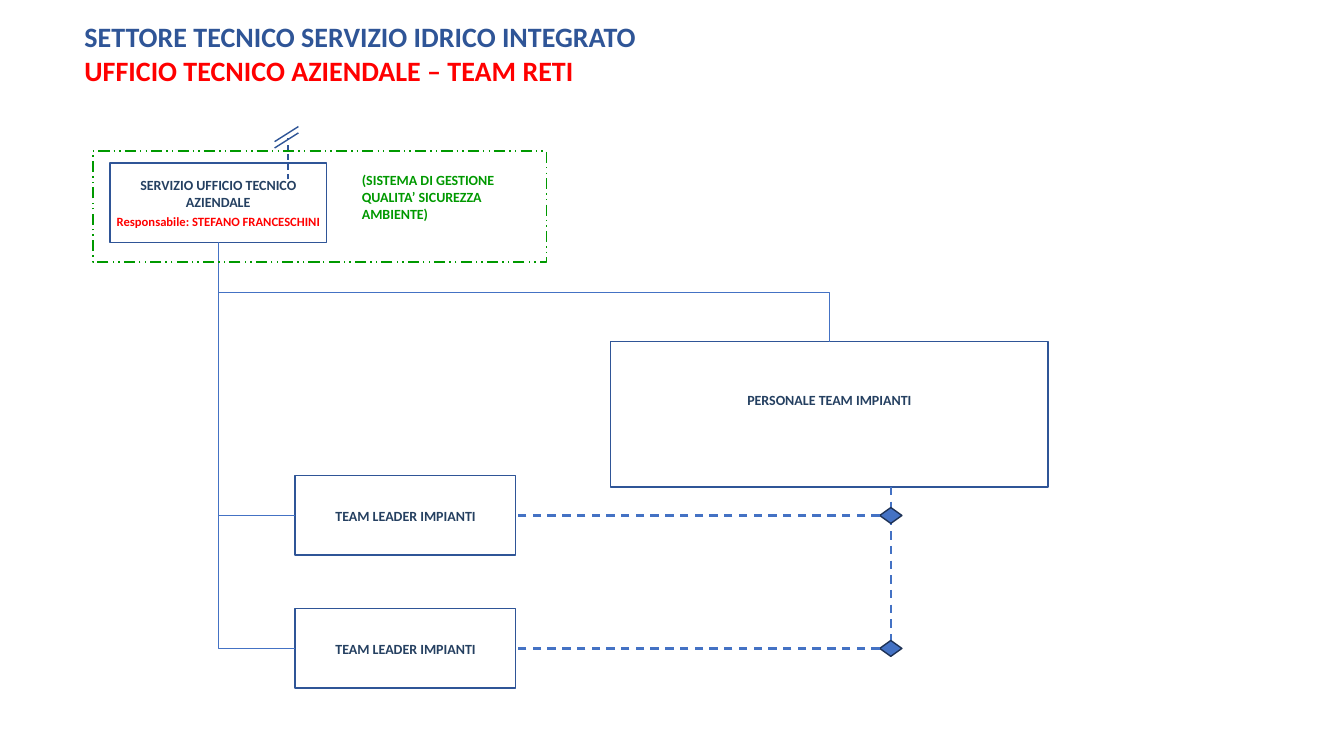
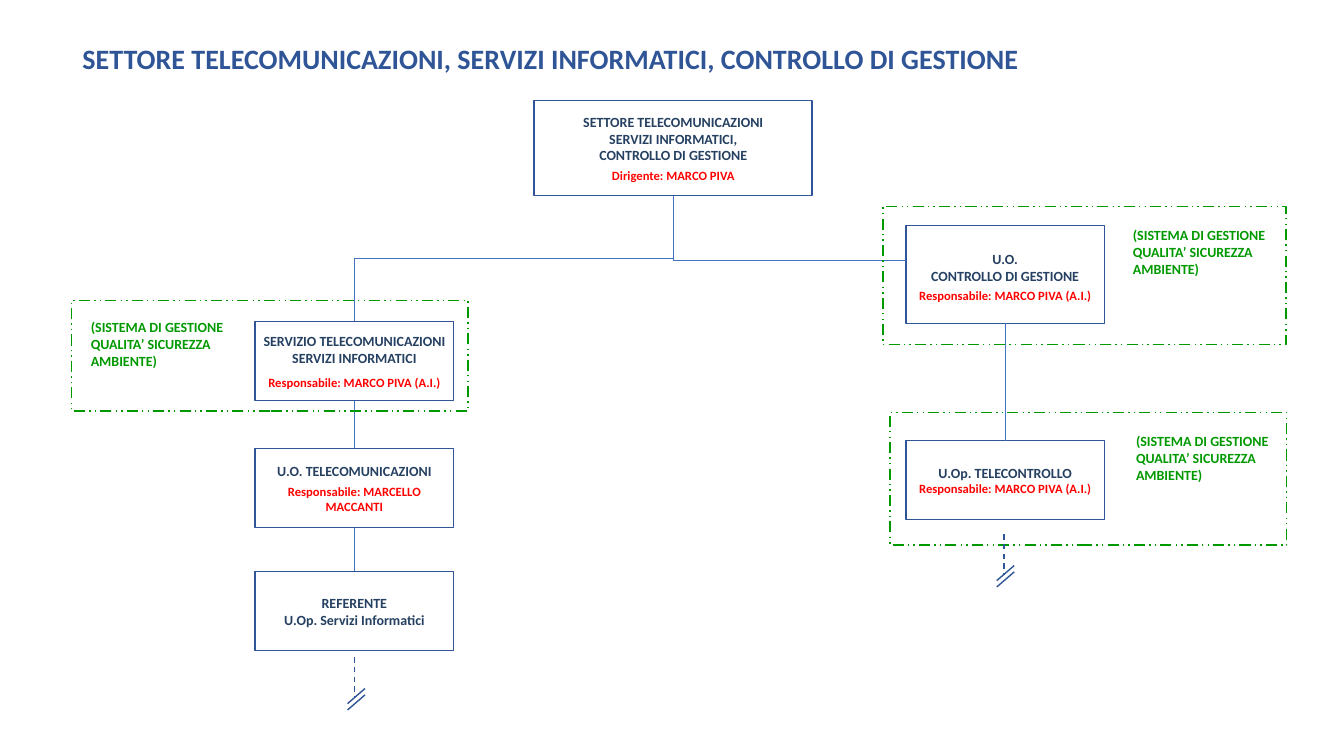
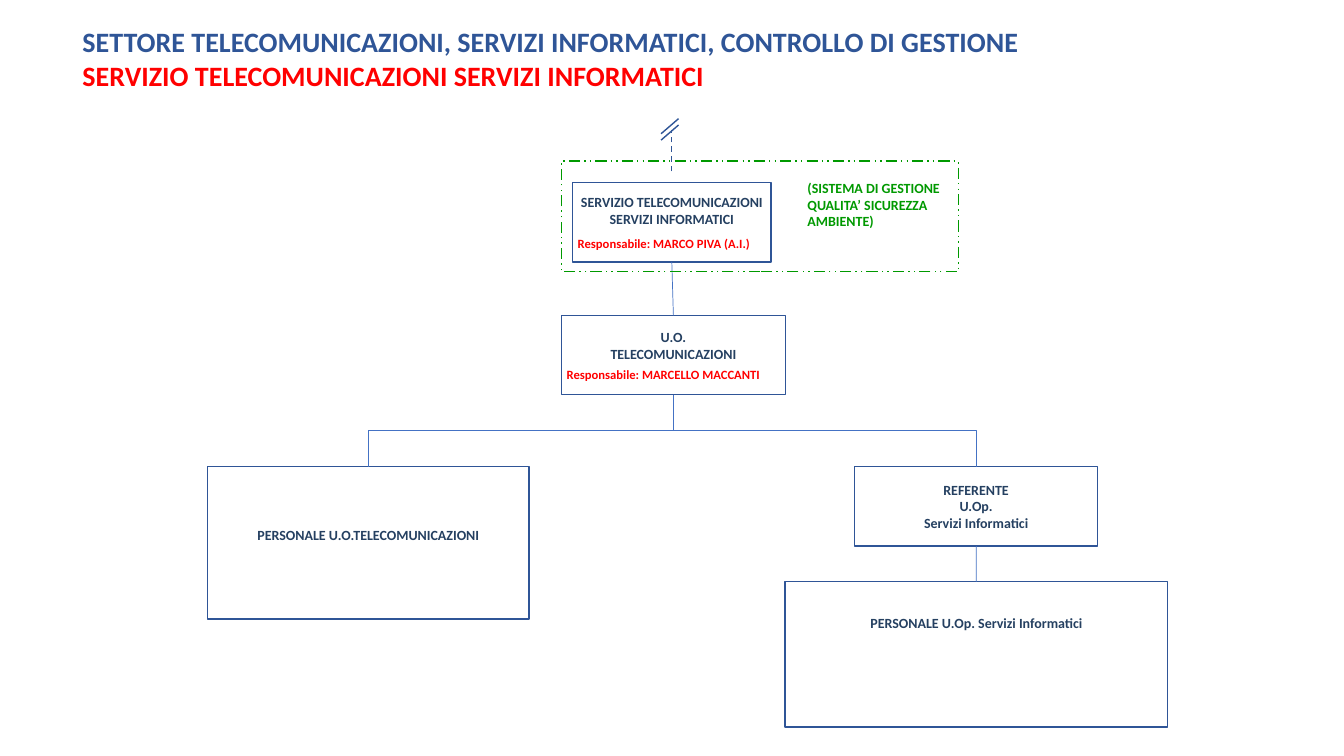
"""Build three organisation chart slides with boxes, frames and connectors."""
from lxml import etree
from pptx import Presentation
from pptx.dml.color import RGBColor
from pptx.enum.dml import MSO_LINE
from pptx.enum.shapes import MSO_CONNECTOR, MSO_SHAPE
from pptx.enum.text import MSO_ANCHOR, PP_ALIGN
from pptx.oxml.ns import qn
from pptx.util import Cm, Pt

DASH, LONG = MSO_LINE.DASH, MSO_LINE.DASH_DOT_DOT
STRAIGHT, ELBOW = MSO_CONNECTOR.STRAIGHT, MSO_CONNECTOR.ELBOW
RECT, KNOT = MSO_SHAPE.RECTANGLE, MSO_SHAPE.FLOWCHART_DECISION
TOP, MIDDLE = MSO_ANCHOR.TOP, MSO_ANCHOR.MIDDLE
LEFT, CENTER = PP_ALIGN.LEFT, PP_ALIGN.CENTER

FONT = "Calibri"
BLUE, NAVY, LINK, EDGE = "2F5597", "254061", "4472C4", "1E3256"
RED, GREEN, WHITE = "FF0000", "009900", "FFFFFF"
PAD = 0.13
NOTE = "(SISTEMA DI GESTIONE QUALITA’ SICUREZZA AMBIENTE)"
SECTOR = "SETTORE TELECOMUNICAZIONI, SERVIZI INFORMATICI, CONTROLLO DI GESTIONE"
PIVA = "Responsabile: MARCO PIVA (A.I.)"
MACCANTI = "Responsabile: MARCELLO MACCANTI"
SERVICE = ["SERVIZIO TELECOMUNICAZIONI", "SERVIZI INFORMATICI"]

SLIDES = [
    {
        "title": ["SETTORE TECNICO SERVIZIO IDRICO INTEGRATO",
                  "UFFICIO TECNICO AZIENDALE – TEAM RETI"],
        "place": (2.13, 0.71, 30, 1.27),
        "boxes": {
            "head": dict(at=(2.77, 4.11, 5.46, 2),
                         text=["SERVIZIO UFFICIO TECNICO AZIENDALE"],
                         boss="Responsabile: STEFANO FRANCESCHINI"),
            "lead 1": dict(at=(7.44, 11.99, 5.56, 2), text=["TEAM LEADER IMPIANTI"]),
            "lead 2": dict(at=(7.44, 15.34, 5.56, 2), text=["TEAM LEADER IMPIANTI"]),
            "staff": dict(at=(15.39, 8.61, 11.02, 3.66),
                          text=["PERSONALE TEAM IMPIANTI"], drop=1.26),
        },
        "frames": [((2.34, 3.81, 11.43, 2.79), (8.99, 4.19, 4.42, 1.55))],
        "links": [],
        "bends": [("head", "staff", 0), ("head", "lead 1", 1), ("head", "lead 2", 1)],
        "breaks": [(7.26, 4.52, -1, 0.3)],
        "knots": (22.45, "staff", ["lead 1", "lead 2"]),
    },
    {
        "title": [SECTOR],
        "place": (2.08, 0.71, 30, 1.52),
        "boxes": {
            "head": dict(at=(13.46, 2.54, 7.01, 2.39),
                         text=["SETTORE TELECOMUNICAZIONI", "SERVIZI INFORMATICI,",
                               "CONTROLLO DI GESTIONE"],
                         boss="Dirigente: MARCO PIVA"),
            "control": dict(at=(22.83, 5.69, 5, 2.46), boss=PIVA, drop=0.62,
                            text=["U.O.", "CONTROLLO DI GESTIONE"]),
            "remote": dict(at=(22.83, 11.1, 5, 2), text=["U.Op. TELECONTROLLO"],
                           boss=PIVA, gap=0),
            "service": dict(at=(6.43, 8.1, 5, 2), text=SERVICE, boss=PIVA, gap=6),
            "unit": dict(at=(6.43, 11.3, 5, 2), text=["U.O. TELECOMUNICAZIONI"],
                         boss=MACCANTI),
            "contact": dict(at=(6.43, 14.4, 5, 2),
                            text=["REFERENTE", "U.Op. Servizi Informatici"]),
        },
        "frames": [((22.25, 5.21, 10.16, 3.48), (28.42, 5.59, 3.86, 1.55)),
                   ((1.8, 7.57, 10, 2.79), (2.16, 7.9, 3.81, 1.55)),
                   ((22.43, 10.39, 10, 3.35), (28.5, 10.77, 3.81, 1.55))],
        "links": [("service", "unit"), ("unit", "contact"), ("control", "remote")],
        "bends": [("head", "service", 0), ((16.97, 4.93), (22.83, 6.55), 1)],
        "breaks": [(25.3, 13.46, 1, 0.22), (8.94, 16.56, 1, 0.22)],
    },
    {
        "title": [SECTOR, "SERVIZIO TELECOMUNICAZIONI SERVIZI INFORMATICI"],
        "place": (2.08, 0.71, 30, 1.52),
        "boxes": {
            "service": dict(at=(14.43, 4.6, 5, 2), text=SERVICE, boss=PIVA, gap=6,
                            side=LEFT),
            "unit": dict(at=(14.15, 7.95, 5.64, 2), text=["U.O.", "TELECOMUNICAZIONI"],
                         boss=MACCANTI, side=LEFT),
            "staff": dict(at=(5.23, 11.76, 8.1, 3.84),
                          text=["PERSONALE U.O.TELECOMUNICAZIONI"], drop=1.5),
            "contact": dict(at=(21.54, 11.76, 6.12, 2),
                            text=["REFERENTE", "U.Op.", "Servizi Informatici"]),
            "crew": dict(at=(19.78, 14.66, 9.65, 3.66),
                         text=["PERSONALE U.Op. Servizi Informatici"], drop=0.83),
        },
        "frames": [((14.15, 4.06, 10, 2.79), (20.22, 4.39, 3.81, 1.55))],
        "links": [("service", "unit"), ("contact", "crew")],
        "bends": [("unit", "staff", 0), ("unit", "contact", 0)],
        "breaks": [(16.92, 4.32, -1, 0.22)],
    },
]


def paint(code):
    """Turn a hex string into a colour."""
    return RGBColor.from_string(code)


def ink(line, color, width, dash=None):
    """Style an outline or a connector line."""
    line.color.rgb = paint(color)
    line.width = Pt(width)
    if dash:
        line.dash_style = dash


def write(shape, text, first=True, size=10, color=NAVY, align=LEFT, gap=0):
    """Add one formatted paragraph to a shape."""
    frame = shape.text_frame
    para = frame.paragraphs[0] if first else frame.add_paragraph()
    para.alignment = align
    para.space_before = Pt(gap)
    run = para.add_run()
    run.text = text
    run.font.name, run.font.size, run.font.bold = FONT, Pt(size), True
    run.font.color.rgb = paint(color)


def setup(shape, pad=PAD, drop=None, anchor=MIDDLE):
    """Set wrapping, insets and anchor of a text frame."""
    frame = shape.text_frame
    frame.word_wrap = True
    frame.margin_left = frame.margin_right = frame.margin_bottom = Cm(pad)
    frame.margin_top = Cm(pad if drop is None else drop)
    frame.vertical_anchor = anchor if drop is None else TOP


def label(slide, at, **form):
    """Add an empty text box."""
    shape = slide.shapes.add_textbox(*map(Cm, at))
    setup(shape, **form)
    return shape


def block(slide, at, kind=RECT, fill=WHITE, edge=BLUE, dash=None):
    """Add an outlined preset shape."""
    shape = slide.shapes.add_shape(kind, *map(Cm, at))
    shape.shadow.inherit = False
    if fill:
        shape.fill.solid()
        shape.fill.fore_color.rgb = paint(fill)
    else:
        shape.fill.background()
    ink(shape.line, edge, 1, dash)
    return shape


def card(slide, at, text, boss=None, gap=3, side=CENTER, drop=None):
    """Add a chart box with its unit name and its head."""
    shape = block(slide, at)
    setup(shape, drop=drop)
    for i, words in enumerate(text):
        write(shape, words, first=i == 0, align=CENTER)
    if boss:
        write(shape, boss, first=False, size=9, color=RED, align=side, gap=gap)
    return shape


def wire(slide, start, end, sites=(2, 0), kind=STRAIGHT, color=LINK, width=0.5, dash=None):
    """Draw a connector between points or shapes."""
    spots = [Cm(v) for spot in (start, end)
             for v in (spot if isinstance(spot, tuple) else (0, 0))]
    conn = slide.shapes.add_connector(kind, *spots)
    if not isinstance(start, tuple):
        conn.begin_connect(start, sites[0])
    if not isinstance(end, tuple):
        conn.end_connect(end, sites[1])
    ink(conn.line, color, width, dash)
    etree.SubElement(conn.element.spPr, qn("a:effectLst"))
    return conn


def bend(slide, start, end, site):
    """Draw an elbow that leaves downwards and ends at a top or left side."""
    conn = wire(slide, start, end, (2, site), ELBOW)
    left, top = conn.begin_x, conn.begin_y
    wide, tall = conn.end_x - left, conn.end_y - top
    conn.left = left + (wide - tall) // 2
    conn.top = top + (tall - abs(wide)) // 2
    conn.width, conn.height = tall, abs(wide)
    props = conn.element.spPr
    frame = props.find(qn("a:xfrm"))
    for flip in ("flipH", "flipV"):
        frame.attrib.pop(flip, None)
    if wide > 0:
        frame.set("flipH", "1")
    frame.set("rot", "16200000" if wide > 0 else "5400000")
    if site == 1:
        props.find(qn("a:prstGeom")).set("prst", "bentConnector2")


def cut(slide, x, y, way, half):
    """Draw a dashed stem that ends in two slashes."""
    tip = y + way * 1.04
    wire(slide, (x, y), (x, tip), color=BLUE, width=1, dash=DASH)
    mid = x + way * 0.04
    for step in (-0.06, 0.1):
        row = tip + way * step
        wire(slide, (mid - half, row + 0.19), (mid + half, row - 0.19), color=BLUE, width=1)


def knots(slide, boxes, specs, x, top, leads):
    """Tie the leads to a dashed drop line with diamonds."""
    wide, tall = 0.56, 0.4
    _, y, _, high = specs[top]["at"]
    rows = [specs[name]["at"][1] + specs[name]["at"][3] / 2 for name in leads]
    wire(slide, (x, y + high), (x, rows[-1]), width=1.5, dash=DASH)
    for name, row in zip(leads, rows):
        knot = block(slide, (x - wide / 2, row - tall / 2, wide, tall), KNOT, LINK, EDGE)
        wire(slide, knot, boxes[name], (1, 3), width=1.5, dash=DASH)


def build(deck, data):
    """Build one slide from its data."""
    slide = deck.slides.add_slide(deck.slide_layouts[6])
    title = label(slide, data["place"], pad=0)
    for i, (text, color) in enumerate(zip(data["title"], (BLUE, RED))):
        write(title, text, first=i == 0, size=20, color=color)
    specs = data["boxes"]
    boxes = {name: card(slide, **form) for name, form in specs.items()}
    for start, end in data["links"]:
        wire(slide, boxes[start], boxes[end])
    for start, end, site in data["bends"]:
        bend(slide, boxes.get(start, start), boxes.get(end, end), site)
    if "knots" in data:
        knots(slide, boxes, specs, *data["knots"])
    for frame, note in data["frames"]:
        block(slide, frame, fill=None, edge=GREEN, dash=LONG)
        write(label(slide, note, anchor=TOP), NOTE, color=GREEN)
    for mark in data["breaks"]:
        cut(slide, *mark)


def main():
    """Build and save the deck."""
    deck = Presentation()
    deck.slide_width, deck.slide_height = Cm(33.87), Cm(19.05)
    for data in SLIDES:
        build(deck, data)
    deck.save("out.pptx")


if __name__ == "__main__":
    main()
